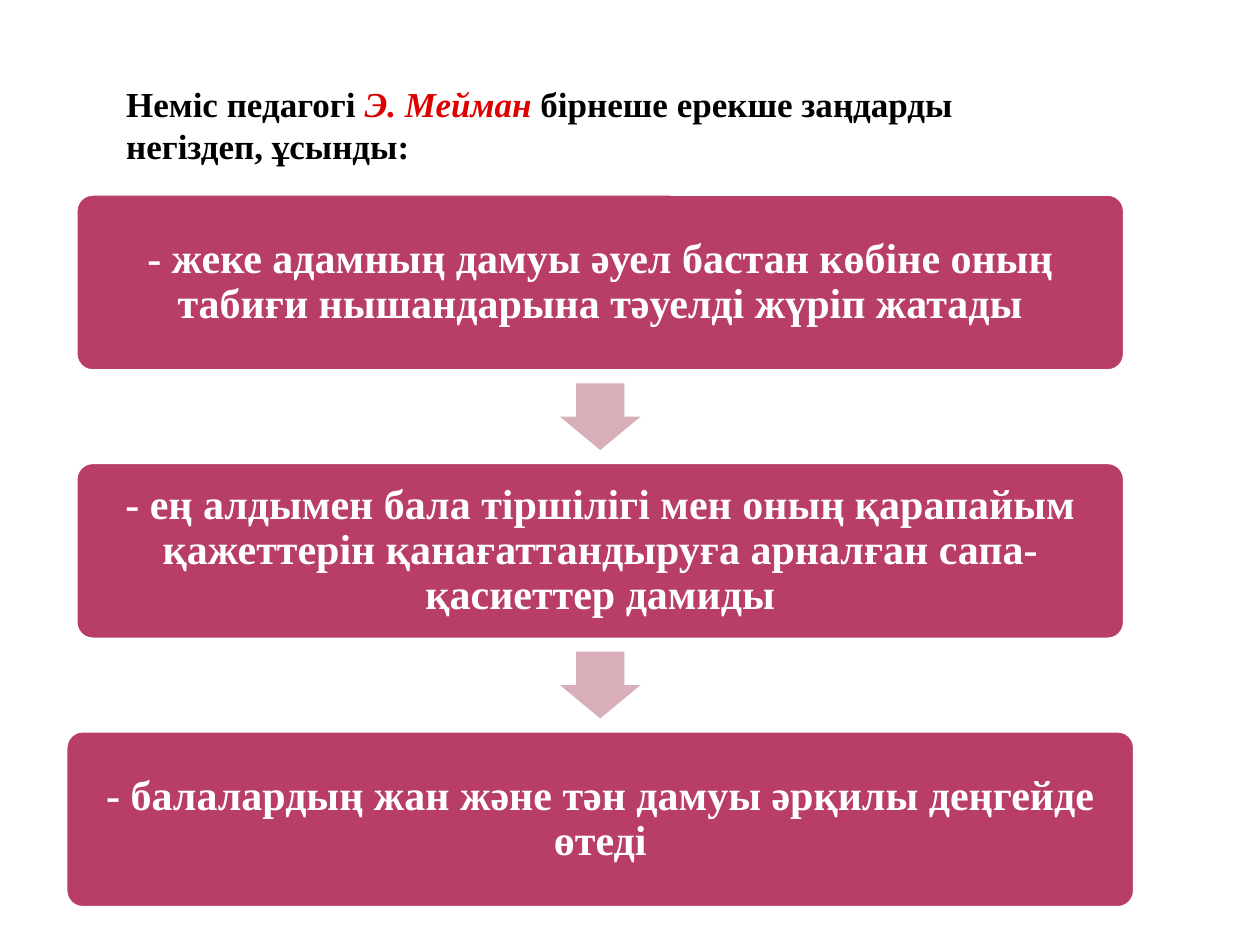
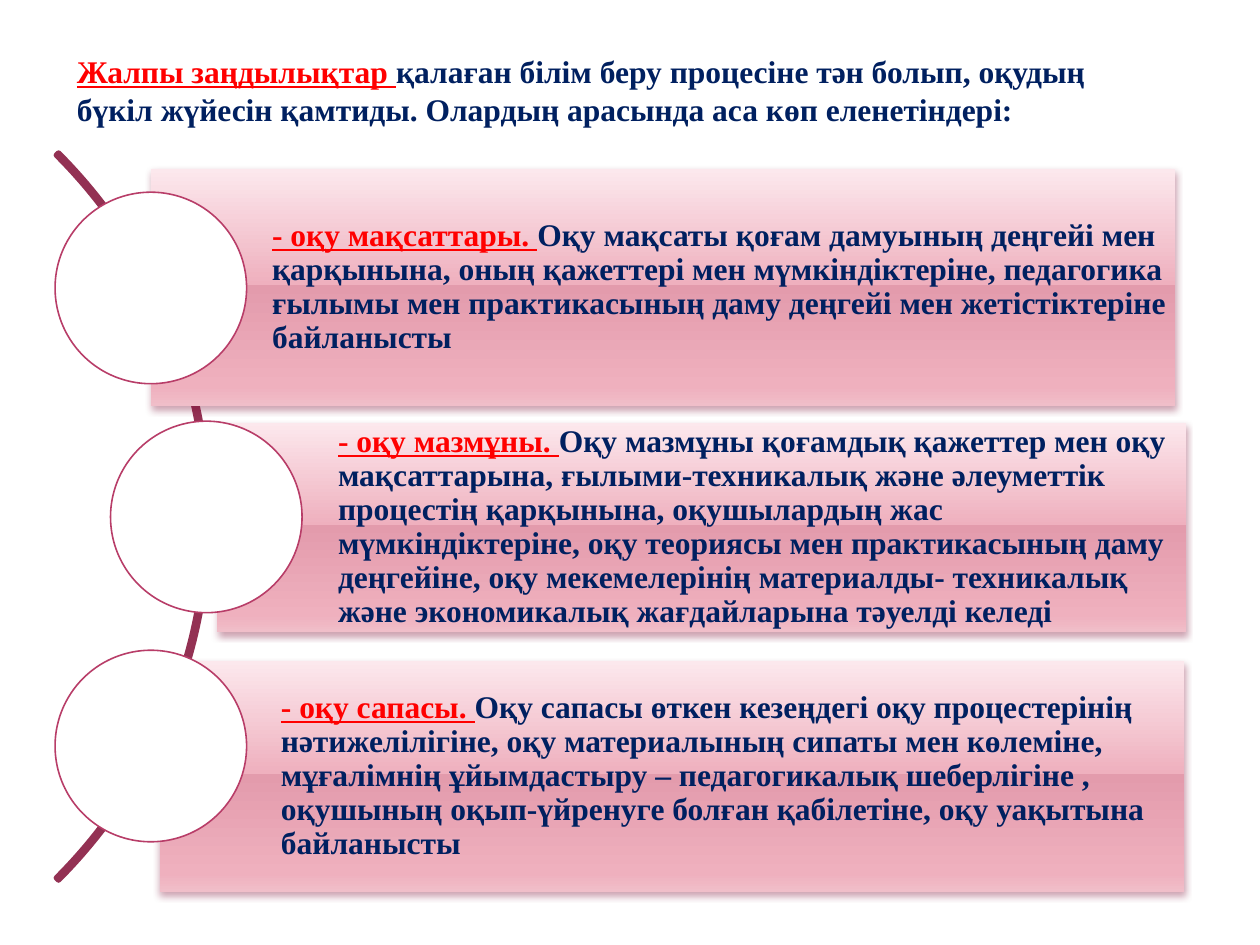
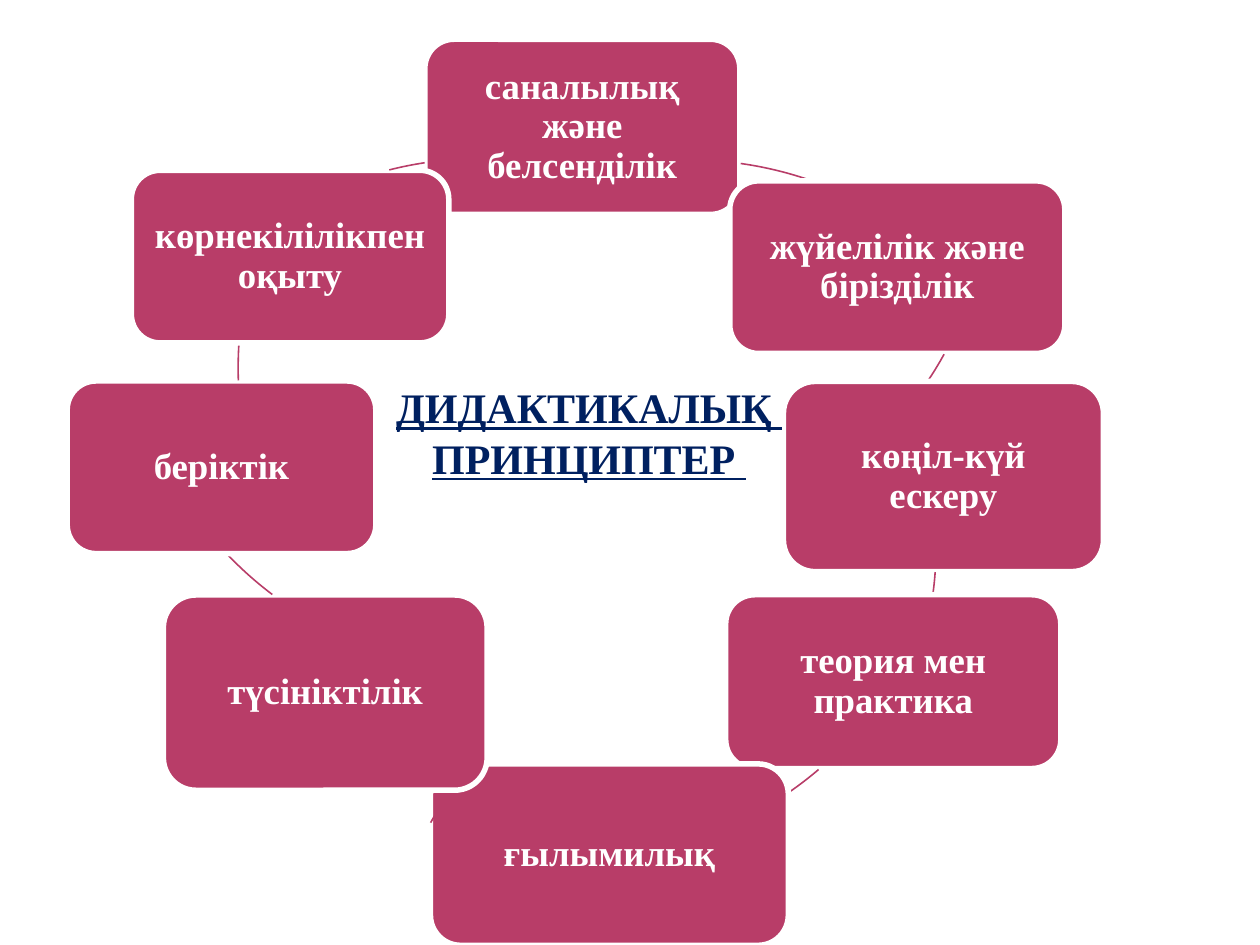
import math
from dataclasses import dataclass

from lxml import etree
from pptx import Presentation
from pptx import util as u
from pptx.dml.color import RGBColor
from pptx.enum import shapes, text
from pptx.oxml.ns import qn

COLORS = {
    "black": "000000", "white": "FFFFFF", "navy": "002060",
    "red": "FF0000", "crimson": "DE0000",
    "berry": "B83D68", "plum": "933153", "rose": "D8AFB9", "shade": "7F1238",
}
PANEL_STOPS = [(0, "FCE8ED"), (49, "EFB0BE"), (49, "E39BAC"), (92, "EFB0BE"), (100, "F0BEC9")]
FONT = "Times New Roman"

prs = Presentation()
prs.slide_width, prs.slide_height = u.Inches(10), u.Inches(7.5)
COL = prs.slide_width / 100
ROW = prs.slide_height / 75

MSO = shapes.MSO_SHAPE
CENTER = text.PP_ALIGN.CENTER

Point = tuple[float, float]


@dataclass
class Place:
    """A rectangle in columns (of 100) and rows (of 75)."""
    col: float
    row: float
    cols: float
    rows: float

    def emu(self) -> list[int]:
        return [round(self.col * COL), round(self.row * ROW),
                round(self.cols * COL), round(self.rows * ROW)]


@dataclass
class Run:
    text: str
    color: str
    underline: bool = False
    italic: bool = False


@dataclass
class Principle:
    """A card and the ring arc that leaves it: the ring's corner, the arc's ends."""
    label: str
    place: Place
    ring: Point
    arc_start: Point
    arc_end: Point


@dataclass
class Panel:
    heading: str
    body: str
    place: Place
    circle_col: float


def rgb(name: str) -> RGBColor:
    return RGBColor.from_string(COLORS[name])


def add_slide():
    return prs.slides.add_slide(prs.slide_layouts[6])


def write(tf, paragraphs: list[list[Run]], size: float, align=None, spacing=None) -> None:
    tf.text = "\n".join("" for _ in paragraphs)
    for p, runs in zip(tf.paragraphs, paragraphs):
        p.alignment, p.line_spacing = align, spacing
        for run in runs:
            r = p.add_run()
            r.text = run.text
            r.font.name, r.font.size, r.font.bold = FONT, u.Pt(size), True
            r.font.underline, r.font.italic = run.underline, run.italic
            r.font.color.rgb = rgb(run.color)


def add_title(slide, place: Place, paragraphs: list[list[Run]], size: float,
              align=None, wrap: bool = True) -> None:
    tf = slide.shapes.add_textbox(*place.emu()).text_frame
    tf.word_wrap = wrap
    tf.auto_size = text.MSO_AUTO_SIZE.SHAPE_TO_FIT_TEXT
    write(tf, paragraphs, size, align)


def add_shape(slide, kind, place: Place, fill=None, line=None, weight=0.9, adjust=()):
    sp = slide.shapes.add_shape(kind, *place.emu())
    sp.shadow.inherit = False
    if fill:
        sp.fill.solid()
        sp.fill.fore_color.rgb = rgb(fill)
    else:
        sp.fill.background()
    if line:
        sp.line.color.rgb = rgb(line)
        sp.line.width = u.Pt(weight)
    else:
        sp.line.fill.background()
    for i, value in enumerate(adjust):
        sp.adjustments[i] = value
    return sp


def fill_text(sp, runs: list[Run], size: float, inset: float, left=None, align=None) -> None:
    tf = sp.text_frame
    tf.word_wrap = True
    tf.vertical_anchor = text.MSO_ANCHOR.MIDDLE
    tf.margin_top = tf.margin_right = tf.margin_bottom = u.Inches(inset)
    tf.margin_left = u.Inches(left or inset)
    write(tf, [runs], size, align, 0.9)


def add_card(slide, place: Place, label: str, size: float, inset: float, adjust=()) -> None:
    sp = add_shape(slide, MSO.ROUNDED_RECTANGLE, place, "berry", "white", 3.15, adjust)
    fill_text(sp, [Run(label, "white")], size, inset, align=CENTER)


def add_color(parent, tag: str, color: str, **attrs):
    node = etree.SubElement(parent, qn(tag), {k: str(v) for k, v in attrs.items()})
    return etree.SubElement(node, qn("a:srgbClr"), val=color)


def add_gloss(sp) -> None:
    """Give a shape the pink gradient and the soft shadow below it."""
    sp.fill.gradient()
    sp.fill.gradient_angle = 270
    stops = sp._element.spPr.find(".//" + qn("a:gsLst"))
    for stop in list(stops):
        stops.remove(stop)
    for share, color in PANEL_STOPS:
        add_color(stops, "a:gs", color, pos=share * 1000)
    effects = sp._element.spPr.find(qn("a:effectLst"))
    shadow = add_color(effects, "a:outerShdw", COLORS["shade"], blurRad=u.Pt(4),
                       dist=u.Pt(2), dir=90 * 60000, rotWithShape=0)
    etree.SubElement(shadow, qn("a:alpha"), val="38000")


def add_ring_arc(slide, corner: Point, start: Point, end: Point, size: float = 57.8) -> None:
    """Draw the part of a ring that runs clockwise from start to end."""
    cx, cy = (edge + size / 2 for edge in corner)
    degrees = [math.degrees(math.atan2(y - cy, x - cx)) % 360 for x, y in (start, end)]
    # An angle is held in 60000ths of a degree, an adjustment in 100000ths.
    add_shape(slide, MSO.ARC, Place(*corner, size, size), None, "berry",
              adjust=[d * 0.6 for d in degrees])


def build_laws() -> None:
    slide = add_slide()
    add_title(slide, Place(9.03, 6.05, 74, 7.7), [[
        Run("Неміс педагогі ", "black"),
        Run("Э. Мейман ", "crimson", italic=True),
        Run("бірнеше ерекше заңдарды негіздеп, ұсынды:", "black"),
    ]], 20)
    laws = [
        ("- жеке адамның дамуы əуел бастан көбіне оның табиғи нышандарына тəуелді жүріп жатады", 83.4),
        ("- ең алдымен бала тіршілігі мен оның қарапайым қажеттерін қанағаттандыруға "
         "арналған сапа-қасиеттер дамиды", 83.4),
        ("- балалардың жан жəне тəн дамуы əрқилы деңгейде өтеді", 85),
    ]
    middle, top, step = 47.64, 15.32, 21.3
    for i, (law, cols) in enumerate(laws):
        row = top + i * step
        if i:
            add_shape(slide, MSO.DOWN_ARROW, Place(middle - 3.2, row - 6.2, 6.4, 5.3),
                      "rose", adjust=(0.6, 0.5))
        add_card(slide, Place(middle - cols / 2, row, cols, 14.2), law, 24, 0.1, (0.1,))


def build_regularities() -> None:
    slide = add_slide()
    add_title(slide, Place(5.12, 3.63, 83.5, 7.1), [[
        Run("Жалпы заңдылықтар ", "red", underline=True),
        Run("қалаған білім беру процесіне тəн болып, оқудың бүкіл жүйесін қамтиды. "
            "Олардың арасында аса көп еленетіндері:", "navy"),
    ]], 18)
    add_shape(slide, MSO.BLOCK_ARC, Place(-65, 0.2, 81.6, 81.6), None, "plum", 3.15,
              (189, 27, 0.003))
    panels = [
        Panel("- оқу мақсаттары. ",
              "Оқу мақсаты қоғам дамуының деңгейі мен қарқынына, оның қажеттері мен "
              "мүмкіндіктеріне, педагогика ғылымы мен практикасының даму деңгейі мен "
              "жетістіктеріне байланысты",
              Place(12, 13.4, 81.3, 18.8), 4.37),
        Panel("- оқу мазмұны. ",
              "Оқу мазмұны қоғамдық қажеттер мен оқу мақсаттарына, ғылыми-техникалық жəне "
              "əлеуметтік процестің қарқынына, оқушылардың жас мүмкіндіктеріне, оқу теориясы "
              "мен практикасының даму деңгейіне, оқу мекемелерінің материалды- техникалық "
              "жəне экономикалық жағдайларына тəуелді келеді",
              Place(17.23, 33.55, 76.9, 16.6), 8.77),
        Panel("- оқу сапасы. ",
              "Оқу сапасы өткен кезеңдегі оқу процестерінің нəтижелілігіне, оқу материалының "
              "сипаты мен көлеміне, мұғалімнің ұйымдастыру – педагогикалық шеберлігіне , "
              "оқушының оқып-үйренуге болған қабілетіне, оқу уақытына байланысты",
              Place(12.7, 52.47, 81.3, 18.3), 4.37),
    ]
    for i, panel in enumerate(panels):
        sp = add_shape(slide, MSO.RECTANGLE, panel.place)
        add_gloss(sp)
        fill_text(sp, [Run(panel.heading, "red", underline=True), Run(panel.body, "navy")],
                  18, 0.05, left=0.96, align=text.PP_ALIGN.LEFT)
        add_shape(slide, MSO.OVAL, Place(panel.circle_col, 15.25 + i * 18.18, 15.2, 15.2),
                  "white", "berry")


def build_principles() -> None:
    slide = add_slide()
    principles = [
        Principle("саналылық жəне белсенділік", Place(33.72, 3.12, 25, 13.9),
                  (25.9, 12.7), (58.8, 12.9), (64.5, 14.3)),
        Principle("жүйелілік жəне бірізділік", Place(57.92, 14.36, 26.6, 13.7),
                  (20.7, -14.7), (74.9, 28.1), (73.6, 30.2)),
        Principle("көңіл-күй ескеру", Place(62.18, 30.27, 25.4, 15.1),
                  (16.5, 14.4), (74.2, 45.4), (74, 47.2)),
        Principle("теория мен практика", Place(57.6, 47.2, 26.6, 13.8),
                  (17.3, 10.2), (64.9, 61), (62.6, 62.8)),
        Principle("ғылымилық", Place(34.17, 60.63, 28.4, 14.4),
                  (30.5, 50.5), (34.2, 65.3), (35.8, 62.7)),
        Principle("түсініктілік", Place(12.97, 47.22, 25.7, 15.5),
                  (10.1, -4.8), (21.6, 47.2), (18, 44)),
        Principle("беріктік", Place(5.33, 30.24, 24.5, 13.7),
                  (18.9, 0.3), (18.9, 30.2), (18.9, 27.2)),
        Principle("көрнекілілікпен оқыту", Place(10.42, 13.52, 25.2, 13.7),
                  (9.1, 12.6), (30.9, 13.5), (33.7, 12.9)),
    ]
    for item in principles:
        add_card(slide, item.place, item.label, 21, 0.09)
        add_ring_arc(slide, item.ring, item.arc_start, item.arc_end)
    add_title(slide, Place(30.26, 29.8, 33, 9.1),
              [[Run(line, "navy", underline=True)] for line in ("ДИДАКТИКАЛЫҚ ", "ПРИНЦИПТЕР ")],
              24, CENTER, wrap=False)


def main() -> None:
    build_laws()
    build_regularities()
    build_principles()
    prs.save("out.pptx")


if __name__ == "__main__":
    main()
